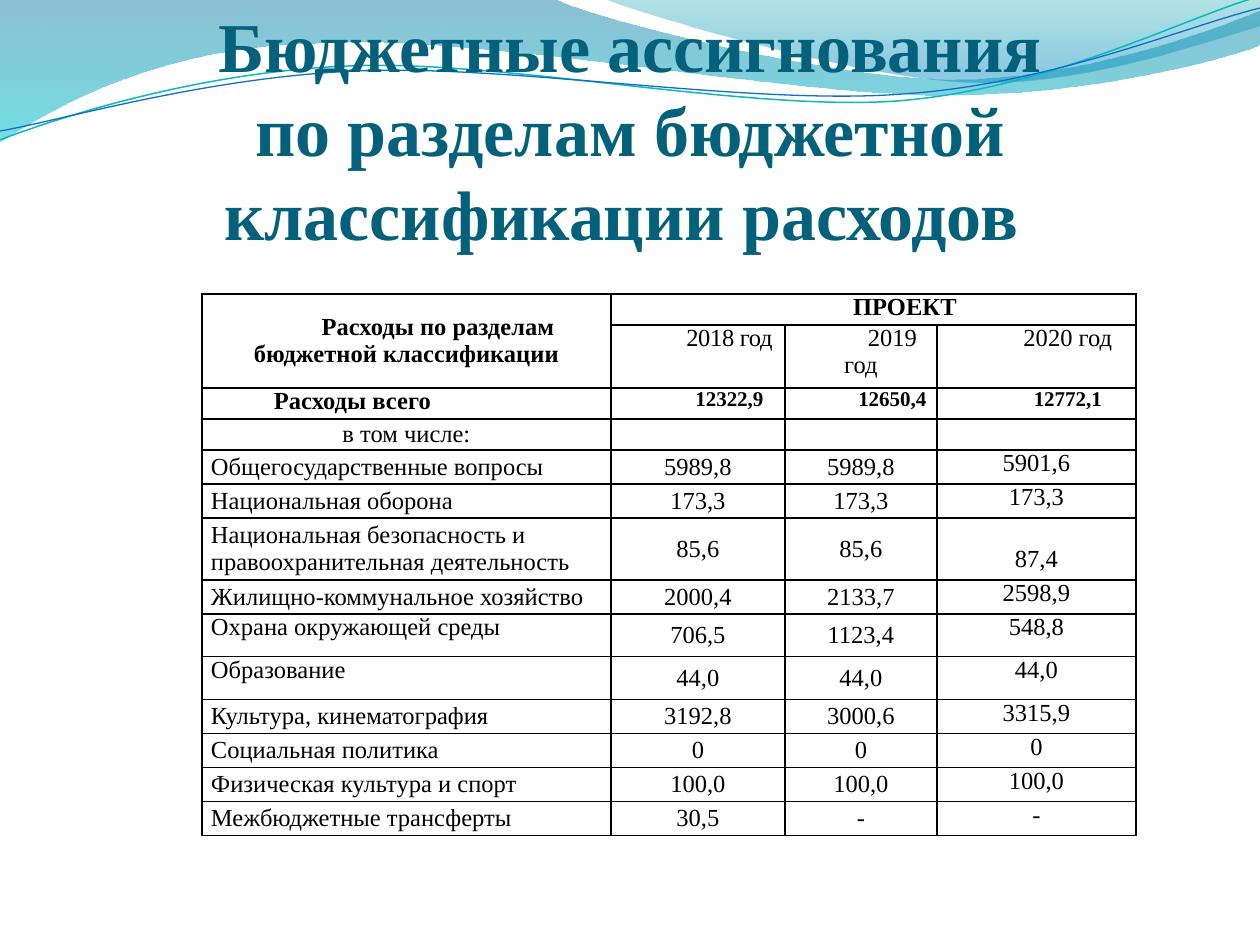
from math import cos, radians, sin
from lxml.etree import SubElement
from pptx import Presentation
from pptx.dml.color import RGBColor
from pptx.enum.text import MSO_ANCHOR, MSO_AUTO_SIZE, PP_ALIGN
from pptx.oxml.ns import qn
from pptx.util import Pt

PX = 914400 / 126
FONT = "Times New Roman"
BLACK = RGBColor(0, 0, 0)
TEAL = RGBColor(0x04, 0x61, 0x7B)
BLUE = RGBColor(0x0F, 0x6F, 0xC6)
AQUA = RGBColor(0x0A, 0xB8, 0xBF)
DEEP = RGBColor(0x00, 0x74, 0xA1)
CYAN = RGBColor(0x00, 0xC6, 0xCF)
SEA = RGBColor(0x00, 0xA1, 0xA9)
SKY = RGBColor(0x00, 0x8B, 0xBF)

TITLE = "Бюджетные ассигнования\vпо разделам бюджетной классификации расходов "
HEAD = "Расходы по разделам бюджетной классификации"
ROWS = [
    (HEAD, "ПРОЕКТ", "", ""),
    ("", "2018 год", "2019 год", "2020 год"),
    ("Расходы всего", "12322,9", "12650,4", "12772,1"),
    ("в том числе:", "", "", ""),
    ("Общегосударственные вопросы", "5989,8", "5989,8", "5901,6"),
    ("Национальная оборона", "173,3", "173,3", "173,3"),
    ("Национальная безопасность и правоохранительная деятельность", "85,6", "85,6", "87,4"),
    ("Жилищно-коммунальное хозяйство", "2000,4", "2133,7", "2598,9"),
    ("Охрана окружающей среды", "706,5", "1123,4", "548,8"),
    ("Образование", "44,0", "44,0", "44,0"),
    ("Культура, кинематография", "3192,8", "3000,6", "3315,9"),
    ("Социальная политика", "0", "0", "0"),
    ("Физическая культура и спорт", "100,0", "100,0", "100,0"),
    ("Межбюджетные трансферты", "30,5", "-", "-"),
]
WIDTHS = [409, 174, 152, 199]
HEIGHTS = [31, 63, 31, 31, 34, 34, 62, 34, 43, 43, 34, 34, 34, 34]
LEFT, TOP, INDENT, SIDE, DROP = 202, 294, 63, 9, 28

BANDS = [
    ([(0, 0), (554, -1), (600, 21, 837, 79, 955, 79), (1075, 79, 1207, 33, 1260, 11),
      (1261, 45), (1239, 55, 1096, 96, 940, 95), (784, 95, 481, 35, 324, 43),
      (163, 45, 58, 105, -1, 142)], [(0, DEEP, 45), (1, CYAN, 55)]),
    ([(604, -1), (641, 15, 859, 78, 969, 82), (1079, 87, 1211, 40, 1260, 26),
      (1260, 0)], [(0, SEA, 30), (0.8, SKY, 45)]),
]
TURN = 357.3
WAVES = [
    ([(0, 140), (60, 117, 199, 72, 349, 66), (498, 59, 747, 112, 898, 101),
      (1049, 89, 1182, 19, 1257, -3)], (629, 72), AQUA, 0.85),
    ([(0, 131), (59, 121, 207, 77, 357, 71), (508, 64, 752, 106, 903, 94),
      (1053, 84, 1186, 26, 1260, 8)], (629, 74), BLUE, 0.75),
]


def px(n):
    return round(n * PX)


def pairs(part):
    return list(zip(part[::2], part[1::2]))


def level(part, mid):
    a = radians(-TURN)
    out = []
    for x, y in pairs(part):
        dx, dy = x - mid[0], y - mid[1]
        out += [mid[0] + dx * cos(a) - dy * sin(a), mid[1] + dx * sin(a) + dy * cos(a)]
    return out


def draw(slide, parts, close):
    dots = [(px(x), px(y)) for part in parts for x, y in pairs(part)]
    pen = slide.shapes.build_freeform(*dots[0])
    pen.add_line_segments(dots[1:], close=close)
    shape = pen.convert_to_shape()
    shape.shadow.inherit = False
    legs = iter(list(shape.element.iter(qn("a:lnTo"))))
    for part in parts[1:]:
        group = [next(legs) for _ in pairs(part)]
        if len(group) == 3:
            bend = group[0].makeelement(qn("a:cubicBezTo"))
            group[0].addprevious(bend)
            for leg in group:
                bend.append(leg[0])
                leg.getparent().remove(leg)
    return shape


def add_band(slide, parts, stops):
    shape = draw(slide, parts, True)
    shape.line.fill.background()
    shape.fill.gradient()
    shape.fill.gradient_angle = 270
    for stop, (pos, color, _) in zip(shape.fill.gradient_stops, stops):
        stop.position = pos
        stop.color.rgb = color
    for tint, (_, _, alpha) in zip(shape.element.spPr.iter(qn("a:srgbClr")), stops):
        SubElement(tint, qn("a:alpha"), val=str(alpha * 1000))


def add_wave(slide, parts, mid, color, width):
    shape = draw(slide, [level(part, mid) for part in parts], False)
    shape.rotation = TURN
    shape.fill.background()
    shape.line.color.rgb = color
    shape.line.width = Pt(width)


def style(font, size, bold, color):
    for key, val in {"name": FONT, "size": Pt(size), "bold": bold}.items():
        setattr(font, key, val)
    font.color.rgb = color


def add_title(slide):
    title = slide.shapes.title
    place = {"left": 63, "top": 97, "width": 1134, "height": 158}
    for key, val in place.items():
        setattr(title, key, px(val))
    frame = title.text_frame
    frame.text = TITLE
    for key, val in {"margin_left": 0, "margin_right": 0, "margin_top": px(6),
                     "margin_bottom": 0, "word_wrap": True, "auto_size": MSO_AUTO_SIZE.NONE,
                     "vertical_anchor": MSO_ANCHOR.BOTTOM}.items():
        setattr(frame, key, val)
    para = frame.paragraphs[0]
    para.alignment = PP_ALIGN.CENTER
    para.line_spacing = Pt(48)
    for run in para.runs:
        style(run.font, 40, True, TEAL)
    title.element.getparent().append(title.element)


def edge(cell):
    props = cell._tc.get_or_add_tcPr()
    for name in ("a:lnL", "a:lnR", "a:lnT", "a:lnB"):
        line = SubElement(props, qn(name), w=str(Pt(1)))
        SubElement(SubElement(line, qn("a:solidFill")), qn("a:srgbClr"), val=str(BLACK))
    cell.fill.background()


def fill_cell(cell, text, row, col):
    top = row in (1, 2) or (row == 0 and col) or (row > 3 and col == 3) \
        or (row in (8, 9) and col == 0)
    for key, val in {"margin_left": px(SIDE), "margin_right": px(SIDE),
                     "margin_top": px(DROP) if (row, col) == (6, 3) else 0,
                     "margin_bottom": 0,
                     "vertical_anchor": MSO_ANCHOR.TOP if top else MSO_ANCHOR.MIDDLE}.items():
        setattr(cell, key, val)
    edge(cell)
    para = cell.text_frame.paragraphs[0]
    flush = col == 0 and (row == 2 or row > 3)
    para.alignment = PP_ALIGN.LEFT if flush else PP_ALIGN.CENTER
    if row < 3:
        para._p.get_or_add_pPr().set("indent", str(px(INDENT)))
    if text:
        run = para.add_run()
        run.text = text
        style(run.font, 12 if row == 2 and col else 14, row in (0, 2), BLACK)
        if (row, col) == (1, 1):
            run.font._element.set("spc", "-20")
    else:
        SubElement(para._p, qn("a:endParaRPr"), sz="1400")


def add_grid(slide):
    frame = slide.shapes.add_table(len(ROWS), len(WIDTHS), px(LEFT), px(TOP),
                                   px(sum(WIDTHS)), px(sum(HEIGHTS)))
    table = frame.table
    table.first_row = table.horz_banding = False
    for col, width in zip(table.columns, WIDTHS):
        col.width = px(width)
    for row, height in zip(table.rows, HEIGHTS):
        row.height = px(height)
    for r, texts in enumerate(ROWS):
        for c, text in enumerate(texts):
            fill_cell(table.cell(r, c), text, r, c)
    table.cell(0, 0).merge(table.cell(1, 0))
    table.cell(0, 1).merge(table.cell(0, 3))


def main():
    deck = Presentation()
    deck.slide_width, deck.slide_height = px(1260), px(945)
    slide = deck.slides.add_slide(deck.slide_layouts[5])
    for band in BANDS:
        add_band(slide, *band)
    for wave in WAVES:
        add_wave(slide, *wave)
    add_title(slide)
    add_grid(slide)
    deck.save("out.pptx")


if __name__ == "__main__":
    main()
